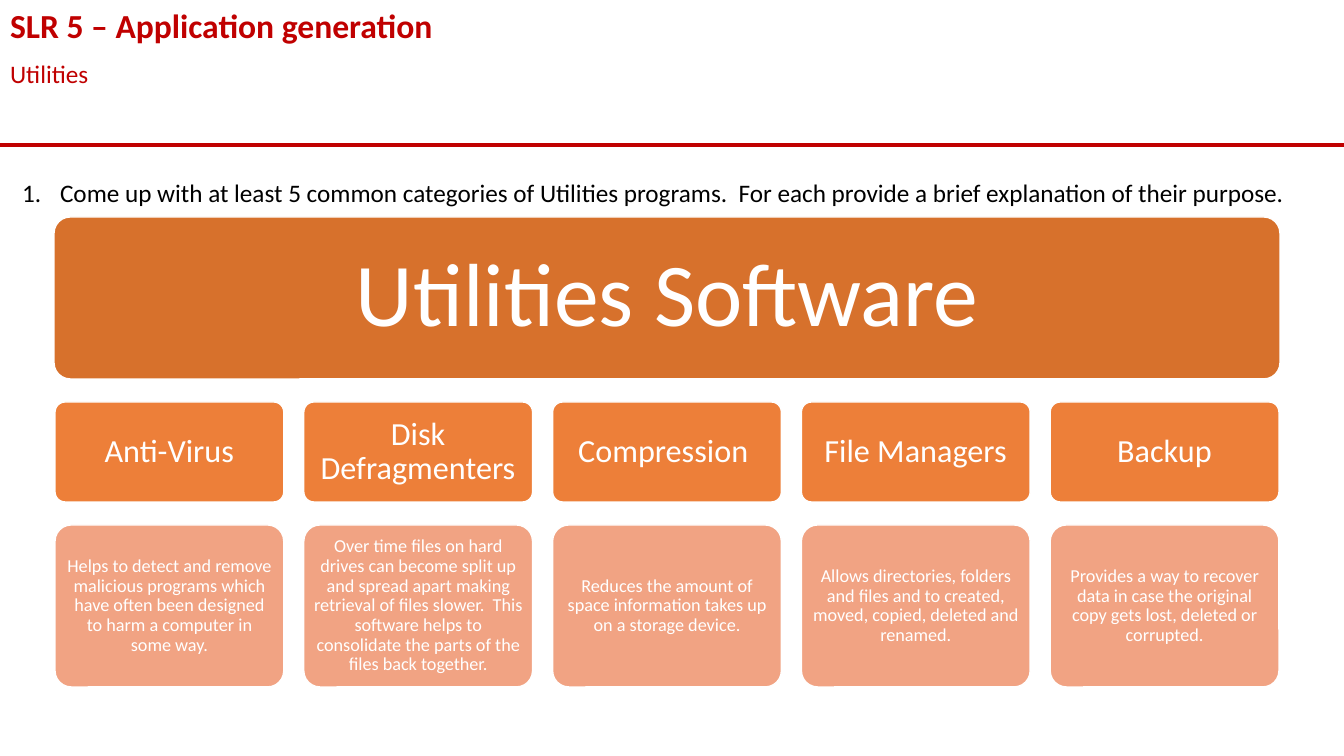
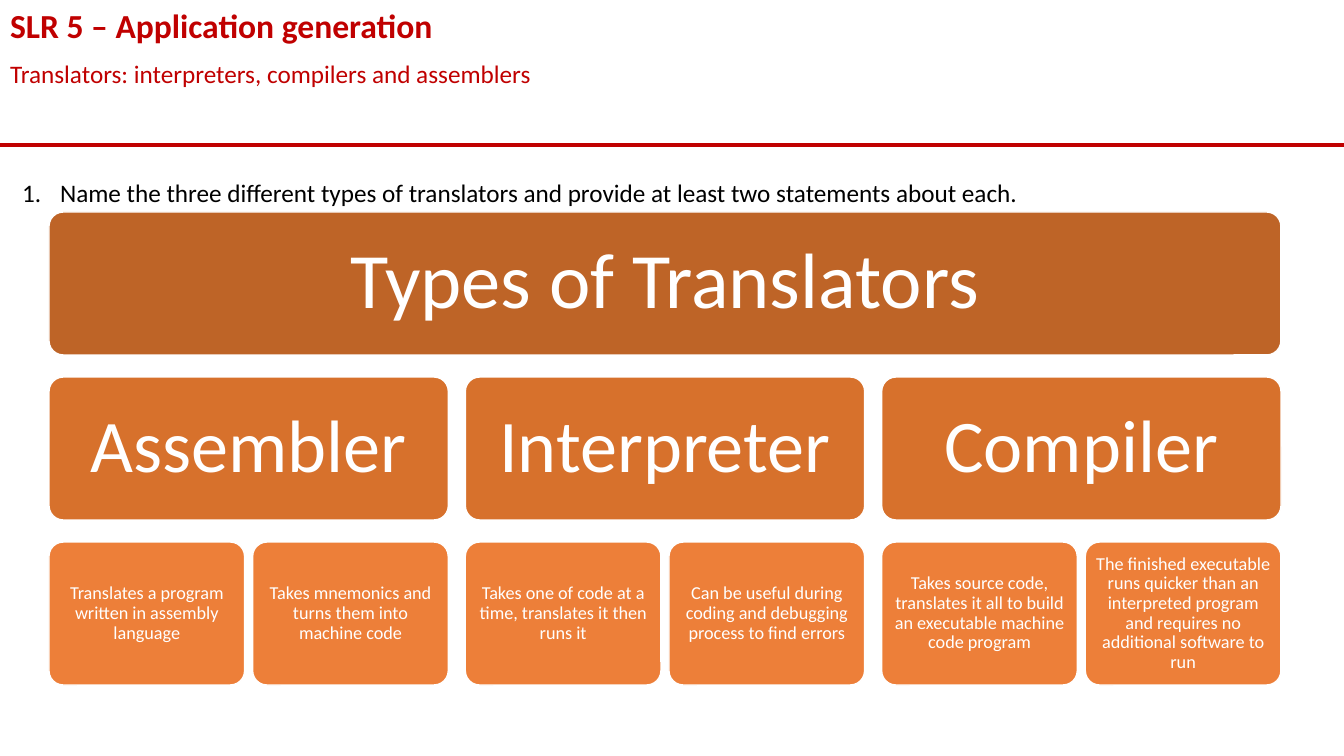
from dataclasses import dataclass

from lxml.etree import SubElement
from pptx import Presentation
from pptx.dml.color import RGBColor as RGB
from pptx.enum.shapes import MSO_CONNECTOR as LINE, MSO_SHAPE as SHAPE
from pptx.enum.text import MSO_ANCHOR as ANCHOR, MSO_AUTO_SIZE as AUTO, PP_ALIGN as ALIGN
from pptx.oxml.ns import qn
from pptx.util import Emu, Pt

WIDE, HIGH = 1344, 756
SCALE = 12192000 / WIDE


# Colours and type sizes
@dataclass(frozen=True)
class Theme:
    font: str = "Calibri"
    red: str = "C00000"
    black: str = "000000"
    white: str = "FFFFFF"
    dark: str = "BE6427"
    deep: str = "D7712C"
    mid: str = "ED7F39"
    pale: str = "F1A383"
    title: int = 24
    body: int = 18
    note: int = 13


# Look of one tier of boxes: top and height in px, inset in px
@dataclass(frozen=True)
class Tier:
    top: int
    high: int
    fill: str
    size: int
    inset: int


T = Theme()
TITLE = "SLR 5 – Application generation"

TOOLS = [
    ("Anti-Virus",
     "Helps to detect and remove malicious programs which have often been "
     "designed to harm a computer in some way."),
    ("Disk Defragmenters",
     "Over time files on hard drives can become split up and spread apart making "
     "retrieval of files slower.  This software helps to consolidate the parts of "
     "the files back together."),
    ("Compression ",
     "Reduces the amount of space information takes up on a storage device."),
    ("File Managers",
     "Allows directories, folders and files and to created, moved, copied, "
     "deleted and renamed."),
    ("Backup",
     "Provides a way to recover data in case the original copy gets lost, "
     "deleted or corrupted."),
]

KINDS = [
    ("Assembler",
     "Translates a program written in assembly language",
     "Takes mnemonics and turns them into machine code"),
    ("Interpreter",
     "Takes one of code at a time, translates it then runs it",
     "Can be useful during coding and debugging process to find errors"),
    ("Compiler",
     "Takes source code, translates it all to build an executable machine code program",
     "The finished executable runs quicker than an interpreted program and "
     "requires no additional software to run"),
]


def px(num):
    return Emu(round(num * SCALE))


def put(item, **vals):
    for key, val in vals.items():
        setattr(item, key, val)


def style(para, size, tint, bold=False):
    put(para.font, name=T.font, size=Pt(size), bold=bold)
    para.font.color.rgb = RGB.from_string(tint)


# Placeholder text, plain or numbered
def fill(hold, text, area, size, tint, bold=False, mark=None, dent=0):
    put(hold, **dict(zip(("left", "top", "width", "height"), map(px, area))))
    frame = hold.text_frame
    frame.text = text
    put(frame, auto_size=AUTO.NONE, vertical_anchor=ANCHOR.TOP, word_wrap=True)
    para = frame.paragraphs[0]
    put(para, alignment=ALIGN.LEFT, space_before=Pt(0))
    props = para._p.get_or_add_pPr()
    props.set("marL", str(px(dent)))
    props.set("indent", str(px(-dent)))
    if mark:
        SubElement(props, qn("a:buAutoNum"), type=mark)
    else:
        SubElement(props, qn("a:buNone"))
    style(para, size, tint, bold)


# Red rule, held by the layout that all slides share
def rule(slide):
    line = slide.shapes.add_connector(LINE.STRAIGHT, 0, px(145), px(WIDE), px(145))
    line.line.width = Pt(2.25)
    line.line.color.rgb = RGB.from_string(T.red)
    SubElement(line.element.spPr, qn("a:effectLst"))
    line.element.nvCxnSpPr.cNvPr.id = 99
    slide.slide_layout.shapes.element.append(line.element)


# Slide with title, topic and numbered question
def page(deck, topic, task):
    slide = deck.slides.add_slide(deck.slide_layouts.get_by_name("Two Content"))
    head, sub, ask = slide.placeholders
    fill(head, TITLE, (0, 0, WIDE, 50), T.title, T.red, bold=True)
    fill(sub, topic, (0, 53, WIDE, 40), T.body, T.red)
    fill(ask, task, (12, 172, 1310, 40), T.body, T.black,
         mark="arabicPeriod", dent=38)
    return slide


# Rounded box with centred text
def box(slide, text, left, wide, tier):
    shape = slide.shapes.add_shape(
        SHAPE.ROUNDED_RECTANGLE, *map(px, (left, tier.top, wide, tier.high)))
    shape.adjustments[0] = 0.1
    shape.shadow.inherit = False
    shape.fill.solid()
    shape.fill.fore_color.rgb = RGB.from_string(tier.fill)
    shape.line.width = Pt(1)
    shape.line.color.rgb = RGB.from_string(T.white)
    frame = shape.text_frame
    put(frame, text=text, word_wrap=True, vertical_anchor=ANCHOR.MIDDLE)
    sides = ("left", "top", "right", "bottom")
    put(frame, **{f"margin_{side}": px(tier.inset) for side in sides})
    para = frame.paragraphs[0]
    put(para, alignment=ALIGN.CENTER, line_spacing=0.9)
    style(para, tier.size, T.white)


# Equal columns as (left, width)
def split(left, wide, count, gap):
    each = (wide - gap * (count - 1)) / count
    return [(left + i * (each + gap), each) for i in range(count)]


# Banner over columns, each a heading with notes side by side
def chart(slide, name, span, cols, tiers, inner, gap, fine=0):
    top, head, note = tiers
    box(slide, name, *span, top)
    for (title, *notes), (left, wide) in zip(cols, split(*inner, len(cols), gap)):
        box(slide, title, left, wide, head)
        for text, spot in zip(notes, split(left, wide, len(notes), fine)):
            box(slide, text, *spot, note)


def main():
    deck = Presentation()
    put(deck, slide_width=px(WIDE), slide_height=px(HIGH))

    # Utilities
    slide = page(
        deck, "Utilities",
        "Come up with at least 5 common categories of Utilities programs.  "
        "For each provide a brief explanation of their purpose.")
    rule(slide)
    tiers = (Tier(217, 162, T.deep, 64, 27),
             Tier(402, 100, T.mid, 23, 10),
             Tier(525, 162, T.pale, T.note, 5))
    chart(slide, "Utilities Software", (54, 1226), TOOLS, tiers,
          inner=(55, 1224), gap=20)

    # Translators
    slide = page(
        deck, "Translators: interpreters, compilers and assemblers",
        "Name the three different types of translators and provide at least "
        "two statements about each.")
    tiers = (Tier(212, 143, T.dark, 56, 23),
             Tier(377, 143, T.deep, 53, 22),
             Tier(542, 143, T.mid, T.note, 5))
    span = (49, 1232)
    chart(slide, "Types of Translators", span, KINDS, tiers,
          inner=span, gap=17, fine=8)

    deck.save("out.pptx")


if __name__ == "__main__":
    main()
